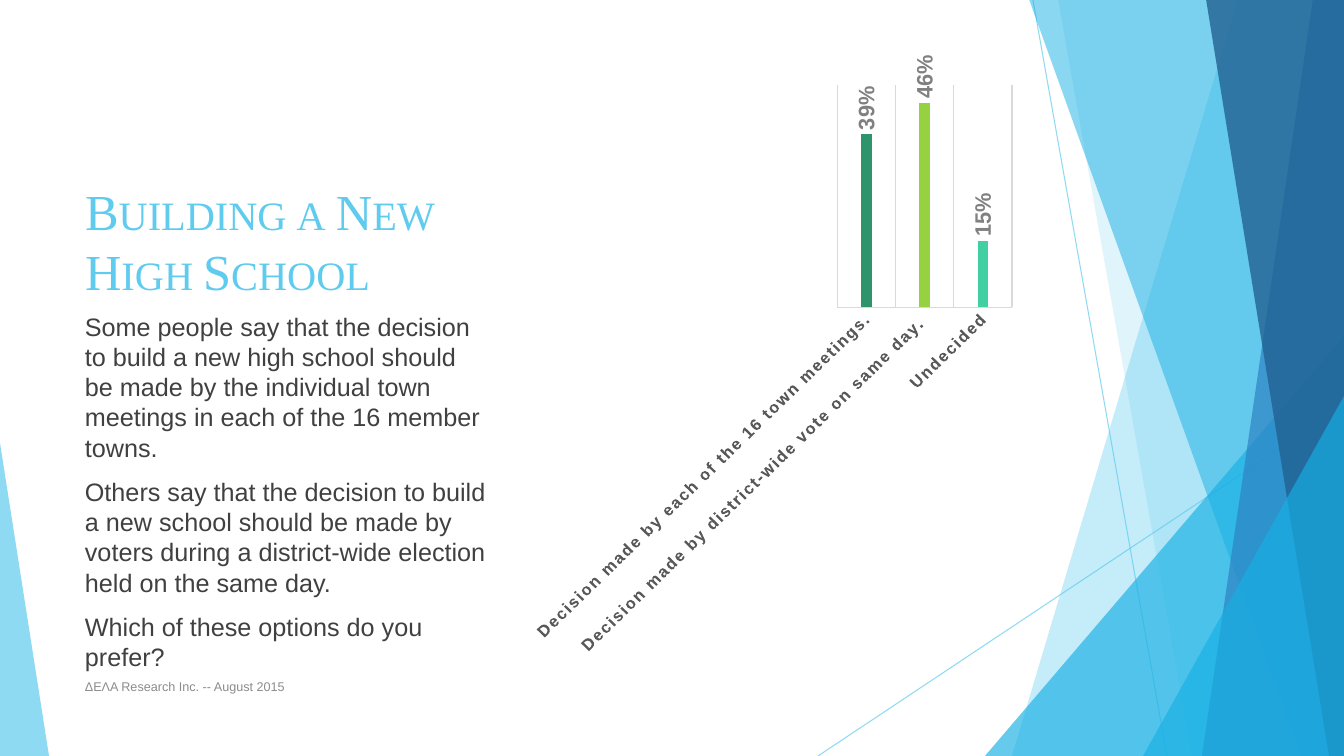
from lxml import etree
from pptx import Presentation
from pptx.chart.data import CategoryChartData
from pptx.dml.color import RGBColor
from pptx.enum.chart import XL_CHART_TYPE, XL_LABEL_POSITION, XL_TICK_LABEL_POSITION, XL_TICK_MARK
from pptx.enum.shapes import MSO_CONNECTOR, MSO_SHAPE
from pptx.enum.text import MSO_ANCHOR, MSO_AUTO_SIZE, PP_ALIGN
from pptx.oxml.ns import qn
from pptx.util import Pt

PX = 914400 / 100.8
SKY = RGBColor(0x5F, 0xCB, 0xEF)
CYAN = RGBColor(0x17, 0xB0, 0xE4)
BLUE = RGBColor(0x2E, 0x83, 0xC3)
NAVY = RGBColor(0x22, 0x62, 0x92)
BODY = RGBColor(0x40, 0x40, 0x40)
FOOT = RGBColor(0x8C, 0x8C, 0x8C)
AXIS = RGBColor(0x59, 0x59, 0x59)
LABEL = RGBColor(0x80, 0x80, 0x80)
GRID = RGBColor(0xD9, 0xD9, 0xD9)
BLACK = RGBColor(0x00, 0x00, 0x00)
BARS = [RGBColor(0x2E, 0x94, 0x6B), RGBColor(0x96, 0xD1, 0x41), RGBColor(0x42, 0xD0, 0xA2)]

LINES = [(1033, 0, 1167, 756), (1344, 406, 818, 756)]
BANDS = [
    (1238, 1012, SKY, 36),
    (1058, 1192, SKY, 20),
    (1029, 1301, CYAN, 50),
    (1313, 1202, BLUE, 70),
    (1206, 1329, NAVY, 80),
]
TRIANGLES = [
    ((985, 336, 359, 420), 1, CYAN, 66),
    ((1143, 396, 201, 360), 1, CYAN, 66),
    ((0, 443, 49, 313), 0, SKY, 70),
]
QUESTION = [
    "Some people say that the decision to build a new high school should be made by "
    "the individual town meetings in each of the 16 member towns.",
    "Others say that the decision to build a new school should be made by voters "
    "during a district-wide election held on the same day.",
    "Which of these options do you prefer?",
]
ANSWERS = {
    "Decision made by each of the 16 town meetings.": 0.39,
    "Decision made by district-wide vote on same day. ": 0.46,
    "Undecided": 0.15,
}


def px(*lengths):
    """Turn pixel lengths into EMU."""
    return [round(n * PX) for n in lengths]


def apply(obj, values):
    """Set attributes of an object from a dict."""
    for name, value in values.items():
        setattr(obj, name, value)


def style_font(font, size, color, name="Arial", bold=False):
    """Format a font."""
    apply(font, {"size": Pt(size), "name": name, "bold": bold})
    font.color.rgb = color


def set_alpha(sp, percent):
    """Make the first solid colour of a shape translucent."""
    color = next(sp._element.spPr.iter(qn("a:srgbClr")))
    etree.SubElement(color, qn("a:alpha"), val=str(percent * 1000))


def paint(sp, color, alpha):
    """Give a shape a translucent fill and no line."""
    sp.shadow.inherit = False
    sp.fill.solid()
    sp.fill.fore_color.rgb = color
    sp.line.fill.background()
    set_alpha(sp, alpha)


def add_line(s, ends):
    """Draw a thin translucent line."""
    ln = s.shapes.add_connector(MSO_CONNECTOR.STRAIGHT, *px(*ends))
    ln.line.color.rgb = SKY
    ln.line.width = Pt(0.75)
    etree.SubElement(ln._element.spPr, qn("a:effectLst"))
    set_alpha(ln, 70)


def add_band(s, top, bottom, color, alpha):
    """Draw a band from a slanted left edge to the right side of the slide."""
    fb = s.shapes.build_freeform(top, -1, scale=PX)
    fb.add_line_segments([(1344, -1), (1344, 756), (bottom, 756)], close=True)
    paint(fb.convert_to_shape(), color, alpha)


def add_triangle(s, box, apex, color, alpha):
    """Draw a triangle with its apex at the given fraction of its width."""
    sp = s.shapes.add_shape(MSO_SHAPE.ISOSCELES_TRIANGLE, *px(*box))
    sp.adjustments[0] = apex
    paint(sp, color, alpha)


def add_backdrop(s):
    """Draw the lines and facets at the sides of the slide."""
    for ends in LINES:
        add_line(s, ends)
    for band in BANDS[:2]:
        add_band(s, *band)
    add_triangle(s, *TRIANGLES[0])
    for band in BANDS[2:]:
        add_band(s, *band)
    for triangle in TRIANGLES[1:]:
        add_triangle(s, *triangle)


def fill_text(sp, texts, anchor, size, color, name="Arial", before=0):
    """Write formatted paragraphs into a shape."""
    tf = sp.text_frame
    apply(tf, {"word_wrap": True, "auto_size": MSO_AUTO_SIZE.NONE, "vertical_anchor": anchor})
    for i, text in enumerate(texts):
        p = tf.add_paragraph() if i else tf.paragraphs[0]
        apply(p, {"alignment": PP_ALIGN.LEFT, "space_before": Pt(before), "line_spacing": 1.0})
        r = p.add_run()
        r.text = text
        style_font(r.font, size, color, name)


def add_title(s, text):
    """Place the title in small capitals."""
    sp = s.shapes.title
    apply(sp, dict(zip(("left", "top", "width", "height"), px(75, 165, 425, 141))))
    fill_text(sp, [text], MSO_ANCHOR.BOTTOM, 36, SKY, "Times New Roman")
    sp.text_frame.paragraphs[0].runs[0].font._element.set("cap", "small")


def add_text(s, box, texts, anchor, size, color, **layout):
    """Add a text box."""
    fill_text(s.shapes.add_textbox(*px(*box)), texts, anchor, size, color, **layout)


def rotate(owner, degrees):
    """Turn the text of chart labels."""
    body = owner._element.find(qn("c:txPr")).find(qn("a:bodyPr"))
    body.set("rot", str(degrees * 60000))
    body.set("vert", "horz")


def add_answers(s, box):
    """Add the column chart of answers."""
    data = CategoryChartData(number_format="0%")
    data.categories = list(ANSWERS)
    data.add_series("Series 1", list(ANSWERS.values()))
    ch = s.shapes.add_chart(XL_CHART_TYPE.COLUMN_CLUSTERED, *px(*box), data).chart
    apply(ch, {"has_legend": False, "has_title": False})
    style_font(ch.font, 10, BLACK)

    apply(ch.value_axis, {"visible": False, "has_major_gridlines": False,
                          "minimum_scale": 0, "maximum_scale": 0.5})
    ax = ch.category_axis
    apply(ax, {"has_major_gridlines": True, "major_tick_mark": XL_TICK_MARK.NONE,
               "minor_tick_mark": XL_TICK_MARK.NONE,
               "tick_label_position": XL_TICK_LABEL_POSITION.NEXT_TO_AXIS})
    for line in (ax.format.line, ax.major_gridlines.format.line):
        line.color.rgb = GRID
        line.width = Pt(0.75)
    font = ax.tick_labels.font
    style_font(font, 12, AXIS, bold=True)
    font._element.set("spc", "120")
    rotate(ax, -45)

    plot = ch.plots[0]
    apply(plot, {"gap_width": 444, "overlap": -90, "vary_by_categories": False})
    ser = plot.series[0]
    ser.format.fill.solid()
    ser.format.fill.fore_color.rgb = SKY
    for i, color in enumerate(BARS):
        fill = ser.points[i].format.fill
        fill.solid()
        fill.fore_color.rgb = color
    labels = ser.data_labels
    apply(labels, {"show_value": True, "position": XL_LABEL_POSITION.OUTSIDE_END,
                   "number_format": "0%", "number_format_is_linked": False})
    style_font(labels.font, 16, LABEL, bold=True)
    rotate(labels, -90)


def main():
    """Build the slide and save it."""
    prs = Presentation()
    prs.slide_width, prs.slide_height = px(1344, 756)
    s = prs.slides.add_slide(prs.slide_layouts[5])
    add_backdrop(s)
    add_title(s, "Building a New High School")
    add_answers(s, (525, 56, 498, 610))
    add_text(s, (75, 306, 425, 285), QUESTION, MSO_ANCHOR.TOP, 18, BODY, before=10)
    add_text(s, (75, 667, 695, 40), ["ΔΕΛΑ Research Inc. -- August 2015"], MSO_ANCHOR.MIDDLE, 9, FOOT)
    prs.save("out.pptx")


if __name__ == "__main__":
    main()
